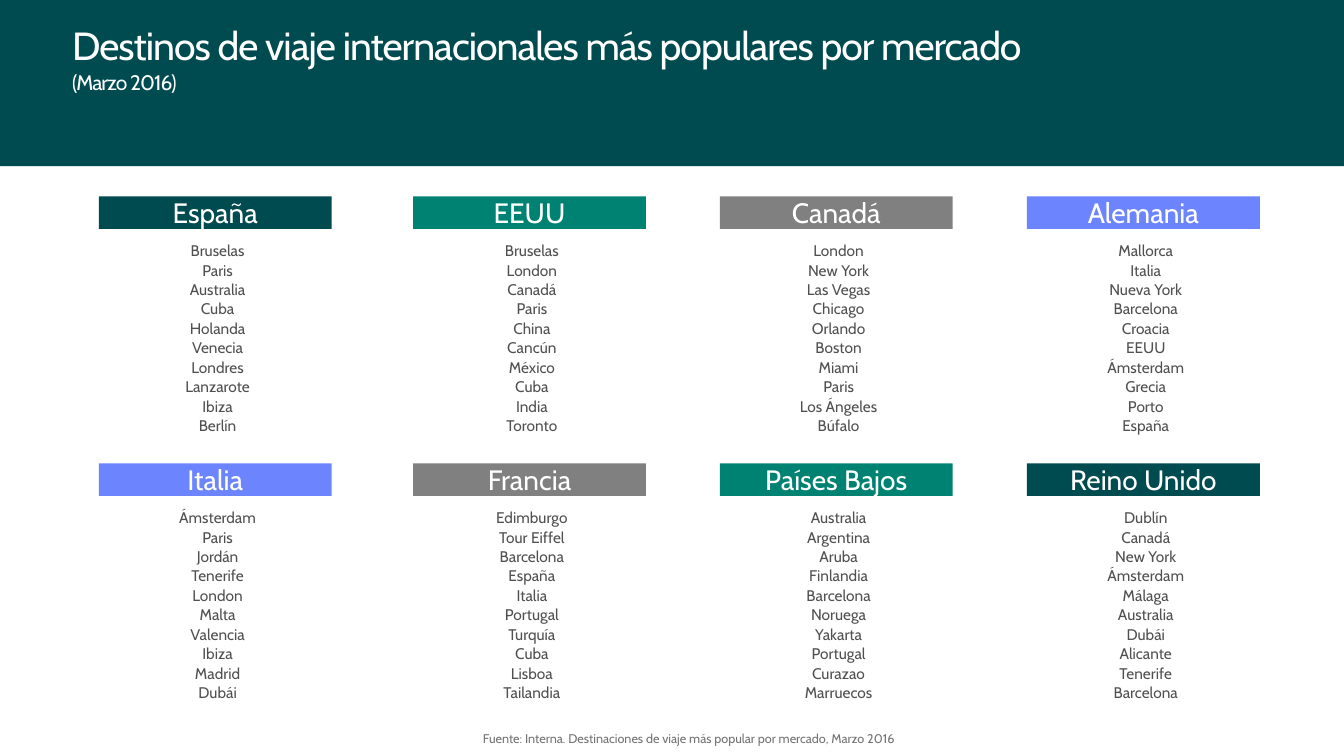
from pptx import Presentation
from pptx.dml.color import RGBColor
from pptx.enum.shapes import MSO_SHAPE
from pptx.enum.text import MSO_ANCHOR, MSO_AUTO_SIZE, PP_ALIGN
from pptx.oxml.xmlchemy import OxmlElement
from pptx.util import Cm, Pt

RECT = MSO_SHAPE.RECTANGLE
TOP, MIDDLE = MSO_ANCHOR.TOP, MSO_ANCHOR.MIDDLE
LEFT, CENTER = PP_ALIGN.LEFT, PP_ALIGN.CENTER
FIXED = MSO_AUTO_SIZE.NONE

WHITE = RGBColor(0xFF, 0xFF, 0xFF)
DARK = RGBColor(0x00, 0x4B, 0x50)
GREEN = RGBColor(0x00, 0x82, 0x72)
GRAY = RGBColor(0x80, 0x80, 0x80)
BLUE = RGBColor(0x6C, 0x85, 0xFF)
INK = RGBColor(0x50, 0x50, 0x50)
PALE = RGBColor(0x73, 0x73, 0x73)

FONT = "Cabin"
COLS = (2.49, 10.41, 18.14, 25.88)
ROWS = (4.95, 11.68)

# Markets by row: name, color, destinations
MARKETS = (
    (
        ("España", DARK, "Bruselas, Paris, Australia, Cuba, Holanda, "
         "Venecia, Londres, Lanzarote, Ibiza, Berlín"),
        ("EEUU", GREEN, "Bruselas, London, Canadá, Paris, China, "
         "Cancún, México, Cuba, India, Toronto"),
        ("Canadá", GRAY, "London, New York, Las Vegas, Chicago, Orlando, "
         "Boston, Miami, Paris, Los Ángeles, Búfalo"),
        ("Alemania", BLUE, "Mallorca, Italia, Nueva York, Barcelona, Croacia, "
         "EEUU, Ámsterdam, Grecia, Porto, España"),
    ),
    (
        ("Italia", BLUE, "Ámsterdam, Paris, Jordán, Tenerife, London, "
         "Malta, Valencia, Ibiza, Madrid, Dubái"),
        ("Francia", GRAY, "Edimburgo, Tour Eiffel, Barcelona, España, Italia, "
         "Portugal, Turquía, Cuba, Lisboa, Tailandia"),
        ("Países Bajos", GREEN, "Australia, Argentina, Aruba, Finlandia, "
         "Barcelona, Noruega, Yakarta, Portugal, Curazao, Marruecos"),
        ("Reino Unido", DARK, "Dublín, Canadá, New York, Ámsterdam, Málaga, "
         "Australia, Dubái, Alicante, Tenerife, Barcelona"),
    ),
)


def place(shape, left, top, width, height):
    shape.left, shape.top = Cm(left), Cm(top)
    shape.width, shape.height = Cm(width), Cm(height)


def frame(shape, anchor=TOP, inset=(0.25, 0.13, 0.25, 0.13)):
    box = shape.text_frame
    box.word_wrap = True
    box.auto_size = FIXED
    box.vertical_anchor = anchor
    box.margin_left, box.margin_top, box.margin_right, box.margin_bottom = map(Cm, inset)
    return box


def write(par, text, size, color, align=LEFT, line=0.9, before=0, track=0):
    """Set one paragraph's text and format."""
    props = par._p.get_or_add_pPr()
    props.set("marL", "0")
    props.set("indent", "0")
    props.append(OxmlElement("a:buNone"))
    par.alignment = align
    par.line_spacing = line
    par.space_before = Pt(before)
    run = par.add_run()
    run.text = text
    run.font.name = FONT
    run.font.size = Pt(size)
    run.font.color.rgb = color
    if track:
        run.font._element.set("spc", str(track))


def block(slide, left, top, width, height, color):
    shape = slide.shapes.add_shape(RECT, Cm(left), Cm(top), Cm(width), Cm(height))
    shape.shadow.inherit = False
    shape.fill.solid()
    shape.fill.fore_color.rgb = color
    shape.line.fill.background()
    return shape


def banner(slide):
    title = slide.shapes.title
    band = block(slide, -0.2, -0.23, 34.24, 4.42, DARK)
    title.element.addprevious(band.element)
    place(title, 1.57, 0.53, 26.24, 5.51)
    box = frame(title)
    write(box.paragraphs[0], "Destinos de viaje internacionales más populares por mercado",
          28, WHITE, track=-70)
    write(box.add_paragraph(), "(Marzo 2016)", 15, WHITE, before=3, track=-70)


def market(slide, left, top, name, color, places):
    head = block(slide, left, top, 5.87, 0.82, color)
    write(frame(head, MIDDLE).paragraphs[0], name, 20, WHITE, align=CENTER, line=1.0)

    body = slide.shapes.add_textbox(Cm(left + 1.05), Cm(top + 1.18), Cm(3.76), Cm(5.08))
    box = frame(body, inset=(0.13, 0, 0, 0))
    for i, city in enumerate(places.split(", ")):
        par = box.add_paragraph() if i else box.paragraphs[0]
        write(par, city, 11, INK, align=CENTER, before=2 if i else 0)


def source(slide):
    note = slide.placeholders[1]
    place(note, 12.17, 18.47, 21.5, 0.58)
    write(frame(note, inset=(0, 0, 0, 0)).paragraphs[0],
          "Fuente: Interna. Destinaciones de viaje más popular por mercado, Marzo 2016",
          9, PALE)


def main():
    deck = Presentation()
    deck.slide_width, deck.slide_height = Cm(33.87), Cm(19.05)
    slide = deck.slides.add_slide(deck.slide_layouts[1])
    banner(slide)
    # Grid of markets
    for top, row in zip(ROWS, MARKETS):
        for left, entry in zip(COLS, row):
            market(slide, left, top, *entry)
    source(slide)
    deck.save("out.pptx")


if __name__ == "__main__":
    main()
